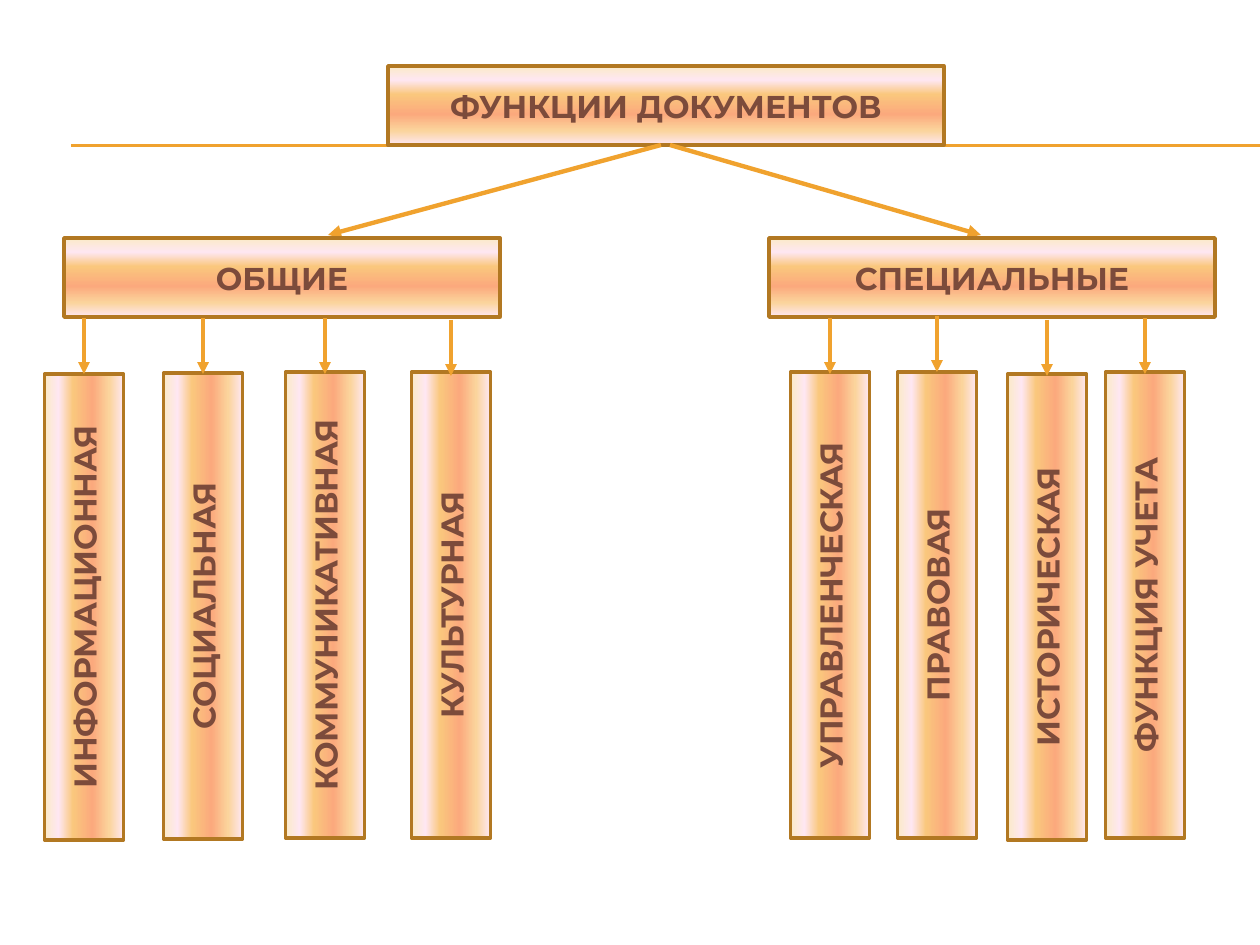
from dataclasses import dataclass

from lxml.etree import SubElement
from pptx import Presentation
from pptx.dml.color import RGBColor
from pptx.enum.shapes import MSO_CONNECTOR, MSO_SHAPE
from pptx.enum.text import MSO_ANCHOR, PP_ALIGN
from pptx.oxml.ns import qn
from pptx.util import Pt

EMU_PER_PX = 914400 / 126
RIGHT_SIDE = 3


def px(length):
    return round(length * EMU_PER_PX)


def assign(target, values):
    for name, value in values.items():
        setattr(target, name, value)


@dataclass(frozen=True)
class Theme:
    font: str = "Montserrat"
    text_size: float = 18
    text: str = "7C4B3B"
    outline: str = "B27822"
    outline_width: float = 2
    accent: str = "F0A22E"
    rule_width: float = 0.75
    branch_width: float = 2.5
    drop_width: float = 2.25
    gradient: tuple = (
        (0, "FBEAC7"), (18, "FEE7F2"), (36, "FAC77D"),
        (61, "FBA97D"), (82, "FBD49C"), (100, "FEE7F2"),
    )


class Diagram:
    """Draws styled elements on the current slide."""

    def __init__(self, page, theme):
        self.page = page
        self.theme = theme

    def paint_gradient(self, box):
        box.fill.gradient()
        box.fill.gradient_angle = 270  # counter-clockwise: runs top to bottom
        stops = box._element.spPr.find(qn("a:gradFill")).find(qn("a:gsLst"))
        for stop in list(stops):
            stops.remove(stop)
        for percent, color in self.theme.gradient:
            stop = SubElement(stops, qn("a:gs"), pos=str(percent * 1000))
            SubElement(stop, qn("a:srgbClr"), val=color)

    def box(self, label, left, top, width, height, rotation=0):
        theme = self.theme
        box = self.page.shapes.add_shape(
            MSO_SHAPE.RECTANGLE, *map(px, (left, top, width, height)))
        box.rotation = rotation
        box.shadow.inherit = False
        self.paint_gradient(box)
        box.line.width = Pt(theme.outline_width)
        box.line.color.rgb = RGBColor.from_string(theme.outline)
        assign(box.text_frame, {
            "word_wrap": True, "vertical_anchor": MSO_ANCHOR.MIDDLE})
        para = box.text_frame.paragraphs[0]
        para.alignment = PP_ALIGN.CENTER
        span = para.add_run()
        span.text = label
        assign(span.font, {
            "name": theme.font, "size": Pt(theme.text_size), "bold": True})
        span.font.color.rgb = RGBColor.from_string(theme.text)
        return box

    def column(self, label, center_x, center_y, length, thickness):
        """Add a box turned so that its text reads upwards."""
        return self.box(label, center_x - length / 2, center_y - thickness / 2,
                        length, thickness, rotation=270)

    def line(self, start, end, width):
        line = self.page.shapes.add_connector(
            MSO_CONNECTOR.STRAIGHT, *map(px, (*start, *end)))
        line.line.width = Pt(width)
        line.line.color.rgb = RGBColor.from_string(self.theme.accent)
        SubElement(line._element.spPr, qn("a:effectLst"))
        return line

    def arrow(self, start, end, width):
        arrow = self.line(start, end, width)
        SubElement(arrow.line._get_or_add_ln(), qn("a:tailEnd"), type="triangle")
        return arrow

    def drop(self, start, end, column):
        """Add an arrow joined to the upper end of a turned column."""
        arrow = self.arrow(start, end, self.theme.drop_width)
        arrow.end_connect(column, RIGHT_SIDE)
        # end_connect ignores rotation, so the end point is set again
        assign(arrow, {"end_x": px(end[0]), "end_y": px(end[1])})


SLIDE_WIDTH, SLIDE_HEIGHT = 1260, 945
BOX_HEIGHT = 79
COLUMN_LENGTH = 466
GROUP_TOP = 238
DROP_LENGTH = 56

# label, left, width, tip of the branch arrow
GROUPS = (
    ("ОБЩИЕ", 64, 436, (661, 328)),
    ("СПЕЦИАЛЬНЫЕ", 769, 446, (670, 981)),
)
# label, centre x, centre y, top of the arrow
FUNCTIONS = (
    ("ИНФОРМАЦИОННАЯ", 84, 607, 318),
    ("СОЦИАЛЬНАЯ", 203, 606, 318),
    ("КОММУНИКАТИВНАЯ", 325, 605, 318),
    ("КУЛЬТУРНАЯ", 451, 605, 320),
    ("УПРАВЛЕНЧЕСКАЯ", 830, 605, 318),
    ("ПРАВОВАЯ", 937, 605, 316),
    ("ИСТОРИЧЕСКАЯ", 1047, 607, 320),
    ("ФУНКЦИЯ УЧЕТА", 1145, 605, 318),
)


def main():
    deck = Presentation()
    assign(deck, {"slide_width": px(SLIDE_WIDTH), "slide_height": px(SLIDE_HEIGHT)})
    theme = Theme()
    diagram = Diagram(deck.slides.add_slide(deck.slide_layouts[6]), theme)

    for rule_y in (145, 146):
        diagram.line((71, rule_y), (SLIDE_WIDTH, rule_y), theme.rule_width)
    diagram.box("ФУНКЦИИ ДОКУМЕНТОВ", 388, 66, 556, BOX_HEIGHT)

    for label, left, width, (branch_start, branch_end) in GROUPS:
        diagram.arrow((branch_start, 145), (branch_end, 235), theme.branch_width)
        diagram.box(label, left, GROUP_TOP, width, BOX_HEIGHT)

    for label, center_x, center_y, arrow_top in FUNCTIONS:
        column = diagram.column(label, center_x, center_y, COLUMN_LENGTH, BOX_HEIGHT)
        diagram.drop((center_x, arrow_top), (center_x, arrow_top + DROP_LENGTH), column)

    deck.save("out.pptx")


if __name__ == "__main__":
    main()
